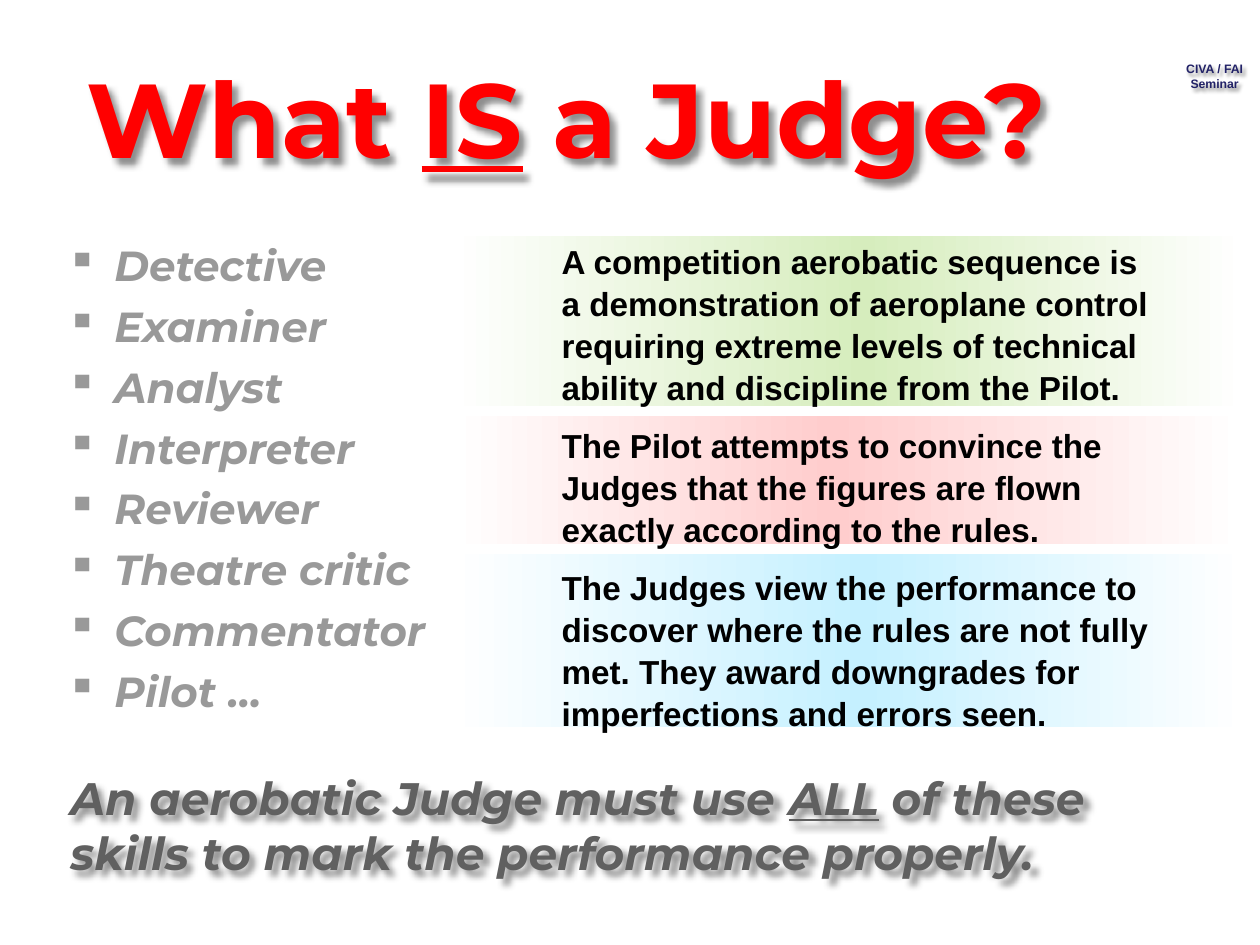
import pptx
import pptx.dml.color
import pptx.enum.shapes
import pptx.enum.text
import pptx.oxml
import pptx.oxml.ns
import pptx.util

Inches = pptx.util.Inches
Pt = pptx.util.Pt
RGBColor = pptx.dml.color.RGBColor
Anchor = pptx.enum.text.MSO_ANCHOR
Align = pptx.enum.text.PP_ALIGN

WHITE = RGBColor(0xFF, 0xFF, 0xFF)
BLACK = RGBColor(0x00, 0x00, 0x00)
RED = RGBColor(0xFF, 0x00, 0x00)
NAVY = RGBColor(0x22, 0x22, 0x67)
LIGHT_GREY = RGBColor(0x99, 0x99, 0x99)
DARK_GREY = RGBColor(0x60, 0x60, 0x60)
GREEN_TINT = RGBColor(0xD6, 0xED, 0xBD)
RED_TINT = RGBColor(0xFF, 0xCD, 0xCD)
BLUE_TINT = RGBColor(0xC5, 0xF0, 0xFF)

NAMESPACE = pptx.oxml.ns.nsdecls("a")
INDENT = Inches(0.38)


class JudgeSlide:
    def __init__(self, presentation):
        self.slide = presentation.slides.add_slide(presentation.slide_layouts[6])

    def panel(self, top, height, tint, middle):
        shape = self.slide.shapes.add_shape(
            pptx.enum.shapes.MSO_SHAPE.RECTANGLE,
            Inches(3.58), Inches(top), Inches(6.3), Inches(height))
        shape.shadow.inherit = False
        shape.line.fill.background()
        shape.fill.gradient()
        stops = "".join(
            f'<a:gs pos="{position * 1000}"><a:srgbClr val="{color}"/></a:gs>'
            for position, color in ((0, WHITE), (middle, tint), (100, WHITE)))
        gradient = pptx.oxml.parse_xml(
            f'<a:gradFill {NAMESPACE}><a:gsLst>{stops}</a:gsLst>'
            '<a:lin ang="10800000" scaled="0"/></a:gradFill>')
        properties = shape._element.spPr
        properties.replace(properties.find(pptx.oxml.ns.qn("a:gradFill")), gradient)

    def text(self, box, paragraphs, font, paragraph_format=None, anchor=Anchor.TOP,
             wrap=True, bullet=None, hanging=False, space_before=0):
        shape = self.slide.shapes.add_textbox(*(Inches(length) for length in box))
        frame = shape.text_frame
        frame.word_wrap = wrap
        frame.vertical_anchor = anchor
        for number, runs in enumerate(paragraphs):
            paragraph = frame.paragraphs[0] if number == 0 else frame.add_paragraph()
            if hanging:
                properties = paragraph._p.get_or_add_pPr()
                properties.set("marL", str(INDENT))
                if bullet:
                    properties.set("indent", str(-INDENT))
                    properties.append(pptx.oxml.parse_xml(
                        f'<a:buChar {NAMESPACE} char="{bullet}"/>'))
            for name, value in (paragraph_format or {}).items():
                setattr(paragraph, name, value)
            if number:
                paragraph.space_before = Pt(space_before)
            for index, content in enumerate(runs):
                run = paragraph.add_run()
                run.text = content
                run.font.underline = index == 1
                self.style(run.font, font)
        return shape

    def style(self, font, values):
        for name, value in values.items():
            if name == "color":
                font.color.rgb = value
            else:
                setattr(font, name, value)

    def shadow(self, shape, distance, blur):
        shape._element.spPr.append(pptx.oxml.parse_xml(
            f'<a:effectLst {NAMESPACE}><a:outerShdw blurRad="{Pt(blur)}" '
            f'dist="{Pt(distance)}" dir="2700000" algn="tl" rotWithShape="0">'
            '<a:srgbClr val="000000"><a:alpha val="43000"/></a:srgbClr>'
            '</a:outerShdw></a:effectLst>'))


def main():
    presentation = pptx.Presentation()
    presentation.slide_width = Inches(10)
    presentation.slide_height = Inches(7.5)
    page = JudgeSlide(presentation)

    seminar = page.text(
        (9.3, 0.44, 0.68, 0.34), [["CIVA / FAI"], ["Seminar"]],
        {"name": "Arial", "size": Pt(7), "bold": True, "color": NAVY},
        paragraph_format={"alignment": Align.CENTER}, wrap=False)
    page.shadow(seminar, 2, 2)

    for top, height, tint, middle in (
            (4.4, 1.37, BLUE_TINT, 48),
            (3.3, 1.02, RED_TINT, 52),
            (1.87, 1.35, GREEN_TINT, 48)):
        page.panel(top, height, tint, middle)

    title = page.text(
        (0.59, 0.3, 9, 1.25), [["What ", "IS", " a Judge?"]],
        {"name": "Montserrat", "size": Pt(60), "bold": True, "color": RED},
        anchor=Anchor.MIDDLE)
    page.shadow(title, 4, 4)

    statements = (
        "A competition aerobatic sequence is a demonstration of aeroplane control "
        "requiring extreme levels of technical ability and discipline from the Pilot.",
        "The Pilot attempts to convince the Judges that the figures are flown "
        "exactly according to the rules.",
        "The Judges view the performance to discover where the rules are not fully "
        "met. They award downgrades for imperfections and errors seen.")
    page.text(
        (3.98, 1.85, 5.28, 4.09), [[statement] for statement in statements],
        {"name": "Arial", "size": Pt(19), "bold": True, "color": BLACK},
        paragraph_format={"line_spacing": 1.05}, hanging=True, space_before=9.5)

    roles = ("Detective", "Examiner", "Analyst", "Interpreter", "Reviewer",
             "Theatre critic", "Commentator", "Pilot …")
    page.text(
        (0.43, 1.85, 3.31, 3.95), [[role] for role in roles],
        {"name": "Montserrat", "size": Pt(24), "bold": True, "italic": True,
         "color": LIGHT_GREY},
        bullet="▪", hanging=True, space_before=6)

    conclusion = page.text(
        (0.46, 6.19, 9.29, 0.71),
        [["An aerobatic Judge must use ", "ALL",
          " of these skills to mark the performance properly."]],
        {"name": "Montserrat", "size": Pt(26), "bold": True, "italic": True,
         "color": DARK_GREY},
        anchor=Anchor.MIDDLE)
    page.shadow(conclusion, 4, 4)

    presentation.save("out.pptx")


if __name__ == "__main__":
    main()
